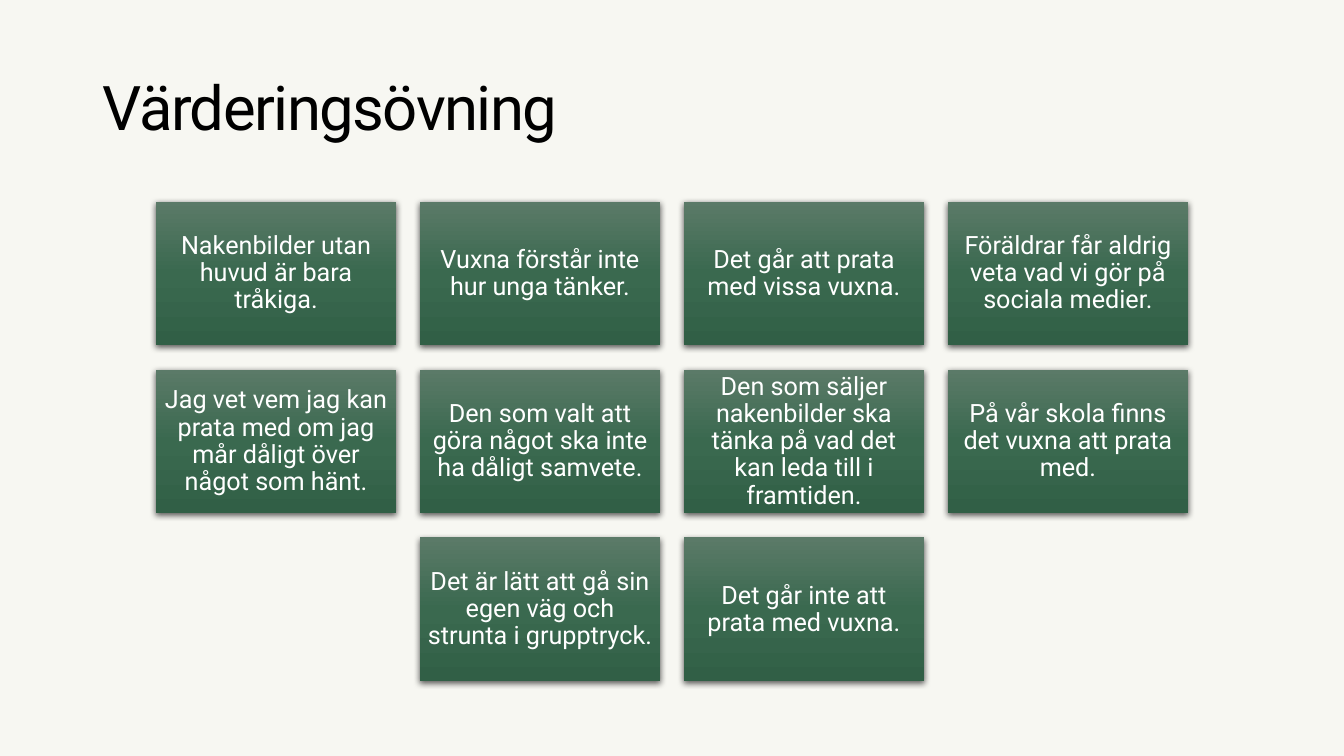
from dataclasses import dataclass

from lxml import etree
from pptx import Presentation
from pptx.dml.color import RGBColor
from pptx.enum.shapes import MSO_SHAPE
from pptx.enum.text import MSO_ANCHOR, MSO_AUTO_SIZE, PP_ALIGN
from pptx.oxml.ns import qn
from pptx.slide import Slide
from pptx.text.text import TextFrame
from pptx.util import Inches, Pt

RECT = MSO_SHAPE.RECTANGLE
MIDDLE = MSO_ANCHOR.MIDDLE
FIXED = MSO_AUTO_SIZE.NONE
LEFT, CENTER = PP_ALIGN.LEFT, PP_ALIGN.CENTER


@dataclass(frozen=True)
class Theme:
    font: str = "Roboto"
    paper: str = "F7F7F2"
    ink: str = "000000"
    light: str = "FFFFFF"
    shade: tuple[tuple[int, str], ...] = (
        (0, "5B7A68"), (50, "3A694F"), (100, "315F46"))
    head: int = 44
    body: int = 18


@dataclass(frozen=True)
class Grid:
    wide: float = 13.33
    high: float = 7.5
    unit: float = 0.238
    top: float = 2
    card_w: int = 10
    card_h: int = 6
    gap: int = 1


@dataclass(frozen=True)
class Card:
    text: str
    col: float
    row: int


THEME = Theme()
GRID = Grid()
ROWS = (
    ("Nakenbilder utan huvud är bara tråkiga.",
     "Vuxna förstår inte hur unga tänker.",
     "Det går att prata med vissa vuxna.",
     "Föräldrar får aldrig veta vad vi gör på sociala medier."),
    ("Jag vet vem jag kan prata med om jag mår dåligt över något som hänt.",
     "Den som valt att göra något ska inte ha dåligt samvete.",
     "Den som säljer nakenbilder ska tänka på vad det kan leda till i framtiden.",
     "På vår skola finns det vuxna att prata med."),
    ("Det är lätt att gå sin egen väg och strunta i grupptryck.",
     "Det går inte att prata med vuxna."),
)


def put_text(frame: TextFrame, text: str, *, size: int, color: str,
             align: PP_ALIGN = LEFT, lead: float = 1, track: int = 0) -> None:
    frame.word_wrap = True
    frame.auto_size = FIXED
    frame.vertical_anchor = MIDDLE
    para = frame.paragraphs[0]
    para.alignment = align
    para.line_spacing = lead
    run = para.add_run()
    run.text = text
    run.font.name = THEME.font
    run.font.size = Pt(size)
    run.font.color.rgb = RGBColor.from_string(color)
    if track:
        run.font._element.set("spc", str(track))


def add_color(node: etree._Element, value: str) -> etree._Element:
    return etree.SubElement(node, qn("a:srgbClr"), val=value)


def draw_card(slide: Slide, card: Card) -> None:
    left = GRID.wide / 2 + card.col * (GRID.card_w + GRID.gap) * GRID.unit
    top = GRID.top + card.row * (GRID.card_h + GRID.gap) * GRID.unit
    shape = slide.shapes.add_shape(
        RECT, Inches(left - GRID.card_w * GRID.unit / 2), Inches(top),
        Inches(GRID.card_w * GRID.unit), Inches(GRID.card_h * GRID.unit))
    shape.line.fill.background()

    shape.fill.gradient()
    shape.fill.gradient_angle = 270
    props = shape._element.spPr
    stops = next(props.iter(qn("a:gsLst")))
    for stop in list(stops):
        stops.remove(stop)
    for share, color in THEME.shade:
        add_color(etree.SubElement(stops, qn("a:gs"), pos=str(share * 1000)), color)

    shape.shadow.inherit = False
    shadow = etree.SubElement(
        props.find(qn("a:effectLst")), qn("a:outerShdw"),
        blurRad=str(Pt(4.5)), dist=str(Pt(1.5)), dir="5400000",
        algn="ctr", rotWithShape="0")
    etree.SubElement(add_color(shadow, THEME.ink), qn("a:alpha"), val="63000")

    frame = shape.text_frame
    frame.margin_left = frame.margin_right = Inches(0.07)
    frame.margin_top = frame.margin_bottom = Inches(0.07)
    put_text(frame, card.text, size=THEME.body, color=THEME.light,
             align=CENTER, lead=0.9)


def draw_title(slide: Slide, text: str) -> None:
    title = slide.shapes.title
    title.left, title.top = Inches(0.92), Inches(0.4)
    title.width, title.height = Inches(11.5), Inches(1.45)
    put_text(title.text_frame, text, size=THEME.head, color=THEME.ink,
             lead=0.75, track=-110)


def main() -> None:
    deck = Presentation()
    deck.slide_width = Inches(GRID.wide)
    deck.slide_height = Inches(GRID.high)
    slide = deck.slides.add_slide(deck.slide_layouts.get_by_name("Title Only"))
    slide.background.fill.solid()
    slide.background.fill.fore_color.rgb = RGBColor.from_string(THEME.paper)
    draw_title(slide, "Värderingsövning")
    for row, texts in enumerate(ROWS):
        for col, text in enumerate(texts):
            draw_card(slide, Card(text, col - (len(texts) - 1) / 2, row))
    deck.save("out.pptx")


if __name__ == "__main__":
    main()
